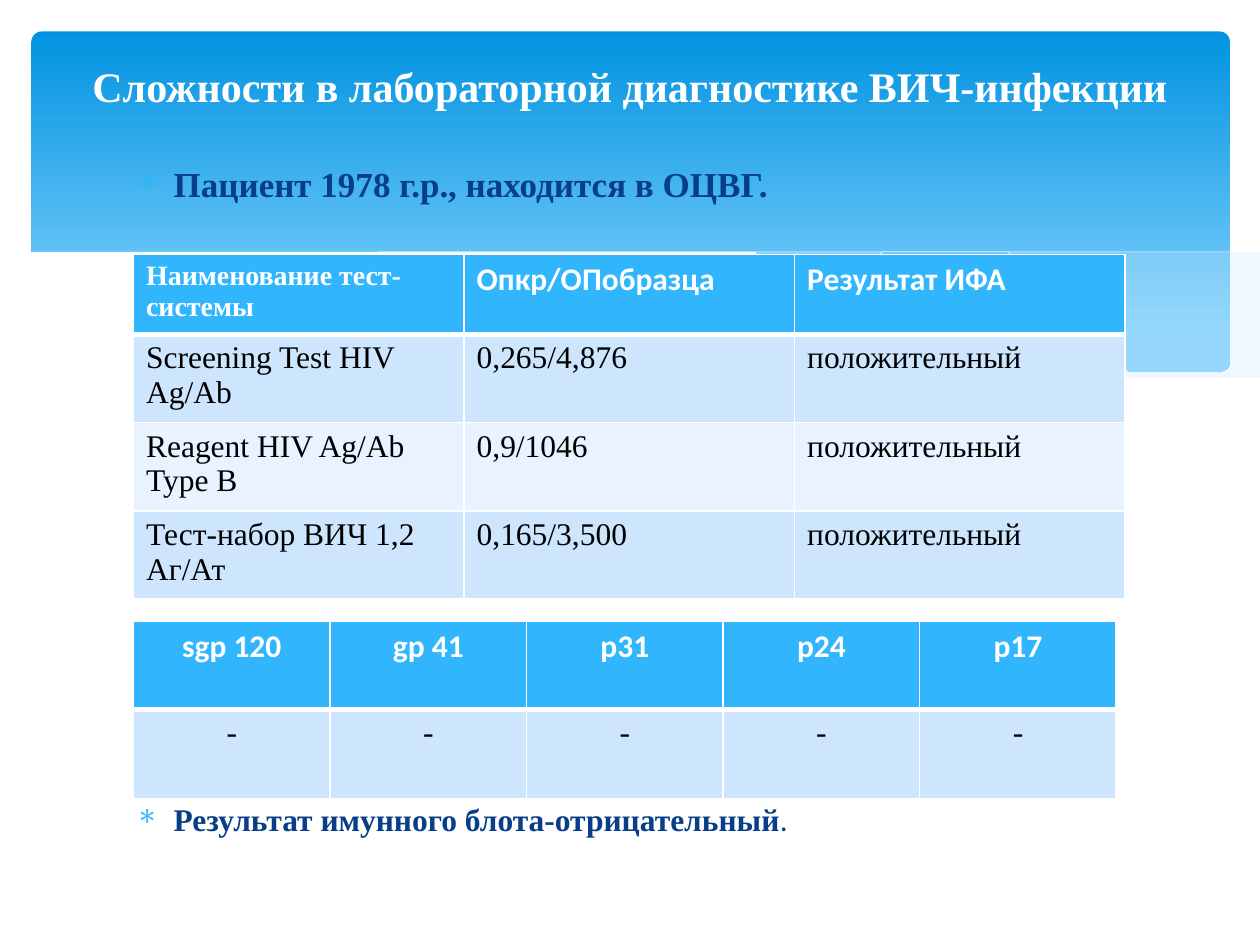
from lxml.etree import SubElement
from pptx import Presentation
from pptx.dml.color import RGBColor
from pptx.enum.shapes import MSO_SHAPE as Preset
from pptx.enum.text import MSO_ANCHOR as Anchor, PP_ALIGN as Align
from pptx.oxml.ns import qn
from pptx.util import Inches, Pt

WIDTH, HEIGHT = 10, 7.5
SERIF, SANS = "Times New Roman", "Calibri"
WHITE, BLACK, NAVY, SKY = "FFFFFF", "000000", "073E87", "31B6FD"
BANDS = ["CEE5FE", "E8F3FF"]
LEFT = 1.06

TITLE = "Сложности в лабораторной диагностике ВИЧ-инфекции"
BULLETS = [
    (1.23, 20, "Пациент 1978 г.р., находится в ОЦВГ.", ""),
    (6.27, 18, "Результат имунного блота-отрицательный", "."),
]
ASSAYS = [
    ["Наименование тест-системы", "Опкр/ОПобразца", "Результат ИФА"],
    ["Screening Test HIV Ag/Ab", "0,265/4,876", "положительный"],
    ["Reagent HIV Ag/Ab Type B", "0,9/1046", "положительный"],
    ["Тест-набор ВИЧ 1,2 Аг/Ат", "0,165/3,500", "положительный"],
]
BLOT = [["sgp 120", "gp 41", "p31", "p24", "p17"], ["-"] * 5]

RIGHT_WAVE = [
    [(9.76, 2), (9.35, 2.07), (8.61, 2.23), (7.79, 2.42), (7.06, 2.57), (6.61, 2.65)],
    [(6.61, 2.65), (7.05, 2.71), (7.57, 2.76), (8.03, 2.78), (8.54, 2.76),
     (8.97, 2.7), (9.35, 2.62), (9.76, 2.47)],
]
MIDDLE_WAVE = [
    [(8.93, 2.73), (8.37, 2.65), (7.75, 2.54), (7.06, 2.4), (6.29, 2.22), (5.69, 2.08),
     (5.14, 1.98), (4.65, 1.91), (4.2, 1.87), (3.61, 1.85), (3.13, 1.88), (2.86, 1.91)],
    [(2.86, 1.91), (3.42, 1.99), (4.04, 2.11), (4.91, 2.32), (5.66, 2.48), (6.34, 2.61),
     (6.95, 2.7), (7.48, 2.76), (7.96, 2.78), (8.48, 2.77), (8.93, 2.73)],
]
LEFT_CREST = [
    [(3.09, 1.95), (3.44, 1.9), (4.01, 1.87), (4.69, 1.89), (5.33, 1.94), (6.08, 2.04),
     (6.95, 2.19), (7.95, 2.41), (9.07, 2.72)],
]
RIGHT_CREST = [
    [(6.13, 2.57), (6.72, 2.41), (7.48, 2.23), (8.36, 2.04), (8.95, 1.94), (9.38, 1.88),
     (9.75, 1.85)],
]
WHITE_WAVE = [
    [(9.77, 2.46), (9.4, 2.59), (8.99, 2.69), (8.5, 2.75), (8.09, 2.77), (7.61, 2.75),
     (6.88, 2.68), (6.03, 2.54), (5.29, 2.39), (4.47, 2.2), (3.65, 2.02), (2.92, 1.9),
     (2.3, 1.85), (1.77, 1.84), (1.32, 1.86), (0.95, 1.91), (0.59, 1.99), (0.36, 2.07),
     (0.23, 2.13)],
    [(0.23, 3.29), (9.77, 3.29)],
]


def color(code):
    return RGBColor.from_string(code)


def write(para, text, size=18, font=SERIF, ink=BLACK, bold=False, align=None):
    span = para.add_run()
    span.text = text
    span.font.size, span.font.name, span.font.bold = Pt(size), font, bold
    span.font.color.rgb = color(ink)
    if align is not None:
        para.alignment = align


def add_text_box(page, left, top, width, height):
    frame = page.shapes.add_textbox(*map(Inches, (left, top, width, height))).text_frame
    frame.word_wrap = True
    frame.vertical_anchor = Anchor.MIDDLE
    return frame.paragraphs[0]


def add_bullet(para):
    props = para._p.get_or_add_pPr()
    props.set("marL", str(Inches(0.3)))
    props.set("indent", str(-Inches(0.3)))
    SubElement(SubElement(props, qn("a:buClr")), qn("a:srgbClr"), val=SKY)
    SubElement(props, qn("a:buChar"), char="∗")


def smooth(points, steps=4):
    padded = [points[0], *points, points[-1]]
    curve = [points[0]]
    for a, b, c, d in zip(padded, padded[1:], padded[2:], padded[3:]):
        for t in (step / steps for step in range(1, steps + 1)):
            curve.append(tuple(
                (2 * q + (r - p) * t + (2 * p - 5 * q + 4 * r - s) * t ** 2
                 + (3 * q - p - 3 * r + s) * t ** 3) / 2
                for p, q, r, s in zip(a, b, c, d)))
    return curve


def add_wave(page, curves, fill=None, opacity=100):
    points = [point for curve in curves for point in smooth(curve)]
    builder = page.shapes.build_freeform(*points[0], scale=Inches(1))
    builder.add_line_segments(points[1:], close=fill is not None)
    wave = builder.convert_to_shape()
    wave.shadow.inherit = False
    if fill is None:
        wave.fill.background()
        wave.line.color.rgb = color(WHITE)
        wave.line.width = Pt(0.25)
        return
    wave.line.fill.background()
    wave.fill.solid()
    wave.fill.fore_color.rgb = color(fill)
    if opacity < 100:
        tone = wave._element.spPr.find(qn("a:solidFill"))[0]
        SubElement(tone, qn("a:alpha"), val=str(opacity * 1000))


def set_borders(cell, **widths):
    props = cell._tc.get_or_add_tcPr()
    for side in "LRTB":
        line = SubElement(props, qn(f"a:ln{side}"), w=str(Pt(widths.get(side, 1))))
        SubElement(SubElement(line, qn("a:solidFill")), qn("a:srgbClr"), val=WHITE)


def add_grid(page, rows, top, width, heights, align=Align.LEFT, first_header=None):
    count = len(rows[0])
    table = page.shapes.add_table(
        len(rows), count, *map(Inches, (LEFT, top, width, sum(heights)))).table
    for column in table.columns:
        column.width = Inches(width / count)
    for r, (texts, height) in enumerate(zip(rows, heights)):
        table.rows[r].height = Inches(height)
        for c, text in enumerate(texts):
            cell = table.cell(r, c)
            set_borders(cell, **({"B": 3} if r == 0 else {"T": 3} if r == 1 else {}))
            cell.fill.solid()
            cell.fill.fore_color.rgb = color(BANDS[(r - 1) % 2] if r else SKY)
            style = {"font": SANS, "ink": WHITE, "bold": True} if r == 0 else {}
            if r == c == 0:
                style.update(first_header or {})
            write(cell.text_frame.paragraphs[0], text, align=align, **style)


def main():
    deck = Presentation()
    deck.slide_width, deck.slide_height = Inches(WIDTH), Inches(HEIGHT)
    page = deck.slides.add_slide(deck.slide_layouts[6])

    banner = page.shapes.add_shape(
        Preset.ROUNDED_RECTANGLE, *map(Inches, (0.25, 0.25, WIDTH - 0.49, 2.7)))
    banner.adjustments[0] = 0.03
    banner.shadow.inherit = False
    banner.line.fill.background()
    banner.fill.gradient()
    banner.fill.gradient_angle = 270
    for stop, place, tone in zip(banner.fill.gradient_stops, (0, 0.9), ("0293E0", "83D3FE")):
        stop.position = place
        stop.color.rgb = color(tone)

    add_wave(page, RIGHT_WAVE, "C6E7FC", 29)
    add_wave(page, MIDDLE_WAVE, "C6E7FC", 40)
    add_wave(page, LEFT_CREST)
    add_wave(page, RIGHT_CREST)
    add_wave(page, WHITE_WAVE, WHITE)

    for top, size, text, ending in BULLETS:
        para = add_text_box(page, 0.98, top, 8.1, 0.45)
        add_bullet(para)
        write(para, text, size=size, ink=NAVY, bold=True)
        if ending:
            write(para, ending, size=size, font=SANS, ink=NAVY)
    write(add_text_box(page, 0.5, 0.37, WIDTH - 1, 0.62), TITLE,
          size=24, ink=WHITE, bold=True, align=Align.CENTER)

    add_grid(page, ASSAYS, 2.02, 7.87, [0.63] + [0.66] * 3,
             first_header={"font": SERIF, "size": 16})
    add_grid(page, BLOT, 4.93, 7.8, [0.7, 0.71], align=Align.CENTER)
    deck.save("out.pptx")


if __name__ == "__main__":
    main()
